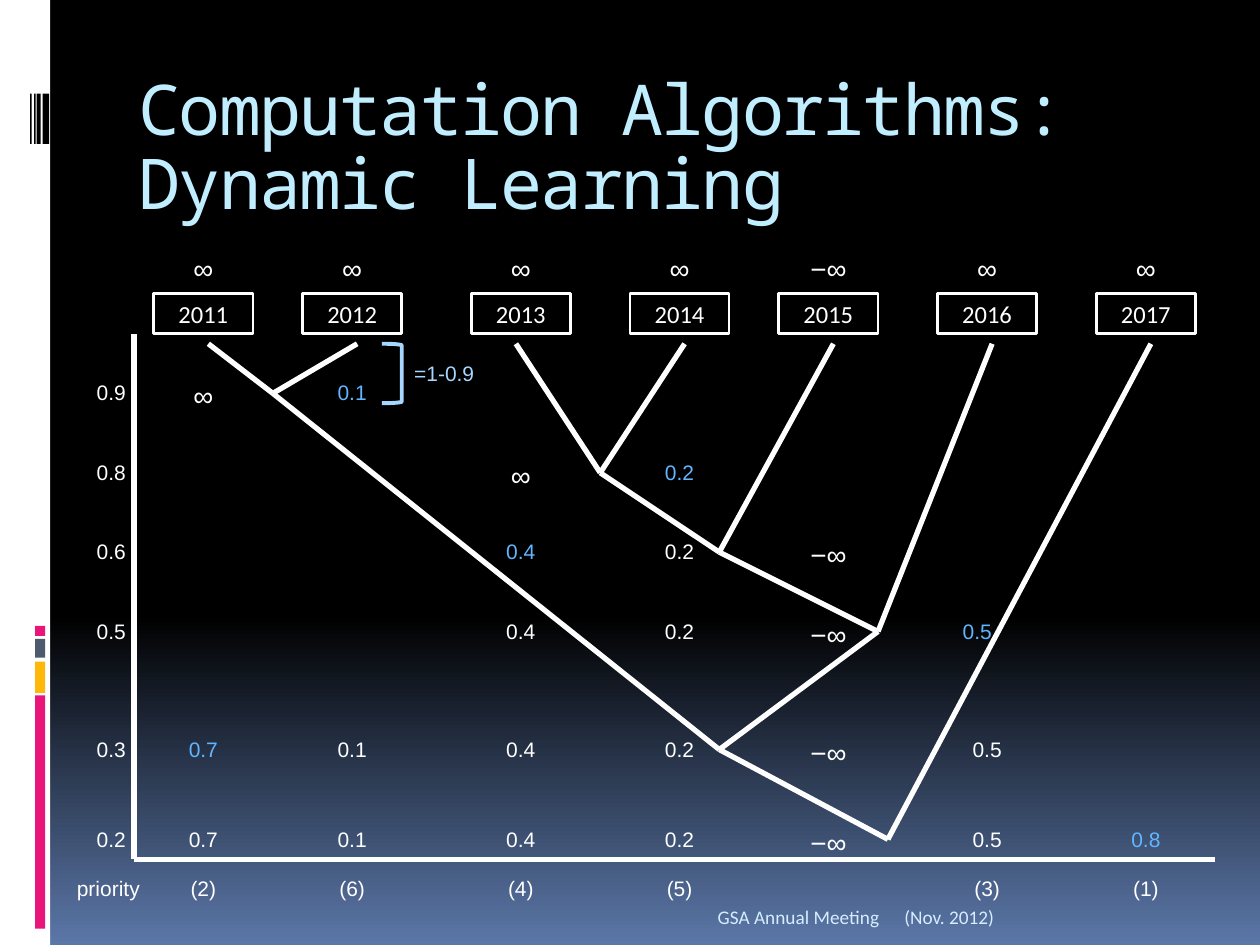
"""Build the dynamic learning slide: a merge tree of years with values by priority."""
from lxml import etree
from pptx import Presentation
from pptx.dml.color import RGBColor
from pptx.enum import shapes, text
from pptx.oxml.ns import qn
from pptx.util import Cm, Pt

WHITE = RGBColor(0xFF, 0xFF, 0xFF)
BLACK = RGBColor(0x00, 0x00, 0x00)
NAVY = RGBColor(0x5B, 0x77, 0xA8)
PINK = RGBColor(0xEA, 0x15, 0x7A)
AMBER = RGBColor(0xFE, 0xB8, 0x0A)
SLATE = RGBColor(0x4E, 0x5B, 0x6F)
TITLE = RGBColor(0xC1, 0xEE, 0xFF)
FOOTER = RGBColor(0xD6, 0xEC, 0xFF)
BLUE = RGBColor(0x61, 0xB6, 0xFF)
PALE = RGBColor(0xA7, 0xD6, 0xFF)
LEFT, CENTER, RIGHT = text.PP_ALIGN.LEFT, text.PP_ALIGN.CENTER, text.PP_ALIGN.RIGHT

prs = Presentation()
prs.slide_width, prs.slide_height = Cm(25.4), Cm(19.05)
s = prs.slides.add_slide(prs.slide_layouts[5])

fill = s.background.fill
fill.gradient()
fill.gradient_angle = 270
for stop, position, color in zip(fill.gradient_stops, (0.65, 1), (BLACK, NAVY)):
    stop.position = position
    stop.color.rgb = color


def add_label(words, x, y, w=1.2, h=0.76, size=12, color=WHITE, align=CENTER, font="Arial"):
    """Add a one-line text box whose left edge is x and whose middle is y."""
    sp = s.shapes.add_textbox(Cm(x), Cm(y - h / 2), Cm(w), Cm(h))
    tf = sp.text_frame
    tf.word_wrap = True
    tf.vertical_anchor = text.MSO_ANCHOR.MIDDLE
    p = tf.paragraphs[0]
    p.text = words
    p.alignment = align
    p.font.size, p.font.name, p.font.color.rgb = Pt(size), font, color
    return sp


def add_line(start, end):
    """Add a thick white line between two points."""
    ln = s.shapes.add_connector(shapes.MSO_CONNECTOR.STRAIGHT, *map(Cm, start + end))
    ln.line.color.rgb = WHITE
    ln.line.width = Pt(3)
    etree.SubElement(ln._element.spPr, qn("a:effectLst"))


sidebar = [
    (0, 0, 1.01, 19.05, WHITE), (0.71, 14.02, 0.2, 4.7, PINK), (0.71, 13.34, 0.2, 0.63, AMBER),
    (0.71, 12.88, 0.2, 0.38, SLATE), (0.71, 12.62, 0.2, 0.2, PINK), (0.86, 1.89, 0.13, 1.01, BLACK),
    (0.74, 1.89, 0.08, 1.01, BLACK), (0.69, 1.89, 0.03, 1.01, BLACK), (0.61, 1.89, 0.03, 1.01, BLACK),
]
for x, y, w, h, color in sidebar:
    sp = s.shapes.add_shape(shapes.MSO_SHAPE.RECTANGLE, Cm(x), Cm(y), Cm(w), Cm(h))
    sp.shadow.inherit = False
    sp.fill.solid()
    sp.fill.fore_color.rgb = color
    sp.line.fill.background()

title = s.shapes.title
title.left, title.top, title.width, title.height = Cm(2.54), Cm(1.42), Cm(21.59), Cm(2.54)
tf = title.text_frame
tf.text = "Computation Algorithms: Dynamic Learning"
tf.word_wrap = True
tf.auto_size = text.MSO_AUTO_SIZE.NONE
tf.vertical_anchor = text.MSO_ANCHOR.TOP
p = tf.paragraphs[0]
p.alignment = LEFT
p.line_spacing = 0.88
p.font.size, p.font.name, p.font.color.rgb = Pt(40), "Noto Sans Mono", TITLE
p.runs[0].font._element.set("spc", "-100")

for words, x, w, align in [("(Nov. 2012)", 17.98, 5.92, LEFT), ("GSA Annual Meeting", 2.54, 15.44, RIGHT)]:
    sp = add_label(words, x, 18.34, w, 1.02, 11, FOOTER, align, "Calibri")
    sp.text_frame.vertical_anchor = text.MSO_ANCHOR.BOTTOM

add_line((2.7, 6.73), (2.7, 17.32))
add_line((24.5, 17.32), (2.7, 17.32))

leaves = [(x, 6.93) for x in (4.2, 7.2, 10.4, 13.8, 16.8, 20, 23.2)]
early, mid, mid_late, late, joined, root = [
    (5.5, 7.93), (12.1, 9.53), (14.5, 11.13), (17.7, 12.73), (14.5, 15.11), (17.9, 16.92)]
branches = [
    (leaves[0], early), (leaves[1], early), (leaves[2], mid), (leaves[3], mid),
    (mid, mid_late), (leaves[4], mid_late), (mid_late, late), (leaves[5], late),
    (early, joined), (late, joined), (joined, root), (leaves[6], root),
]
for start, end in branches:
    add_line(start, end)

columns = dict(zip(range(2011, 2018), (4.1, 7.1, 10.5, 13.7, 16.7, 19.9, 23.1)))
for year, x in columns.items():
    sp = s.shapes.add_shape(shapes.MSO_SHAPE.RECTANGLE, Cm(x - 1), Cm(5.92), Cm(2), Cm(0.8))
    sp.shadow.inherit = False
    sp.fill.background()
    sp.line.color.rgb = WHITE
    sp.line.width = Pt(1.5)
    sp.text_frame.vertical_anchor = text.MSO_ANCHOR.MIDDLE
    p = sp.text_frame.paragraphs[0]
    p.text = str(year)
    p.alignment = CENTER
    p.font.size, p.font.name, p.font.color.rgb = Pt(14), "Calibri", WHITE
    add_label("−∞" if year == 2015 else "∞", x - 0.8, 5.4, 1.6, 0.94, 16)

rows = [
    ("0.9", 7.9, {2011: "∞", 2012: "0.1"}, 2012),
    ("0.8", 9.52, {2013: "∞", 2014: "0.2"}, 2014),
    ("0.6", 11.11, {2013: "0.4", 2014: "0.2", 2015: "−∞"}, 2013),
    ("0.5", 12.73, {2013: "0.4", 2014: "0.2", 2015: "−∞", 2016: "0.5"}, 2016),
    ("0.3", 15.11, {2011: "0.7", 2012: "0.1", 2013: "0.4", 2014: "0.2", 2015: "−∞", 2016: "0.5"}, 2011),
    ("0.2", 16.92, {2011: "0.7", 2012: "0.1", 2013: "0.4", 2014: "0.2", 2015: "−∞", 2016: "0.5",
                    2017: "0.8"}, 2017),
    ("priority", 17.91, {2011: "(2)", 2012: "(6)", 2013: "(4)", 2014: "(5)", 2016: "(3)", 2017: "(1)"}, None),
]
for name, y, values, newest in rows:
    x, w = (1.3, 1.8) if name == "priority" else (1.7, 1.4)
    add_label(name, x, y, w, align=LEFT)
    for year, value in values.items():
        x = columns[year]
        if "∞" in value:
            add_label(value, x - 0.8, y + 0.06, 1.6, 0.94, 16)
        else:
            shift = 0.2 if (name, year) == ("0.5", 2016) else 0
            add_label(value, x - 0.6 - shift, y, color=BLUE if year == newest else WHITE)

sp = s.shapes.add_shape(shapes.MSO_SHAPE.RIGHT_BRACKET, Cm(7.7), Cm(6.93), Cm(0.4), Cm(1.2))
sp.shadow.inherit = False
sp.fill.background()
sp.line.color.rgb = PALE
sp.line.width = Pt(2.25)
add_label("=1-0.9", 8.1, 7.52, 1.8, color=PALE, align=LEFT)

prs.save("out.pptx")
